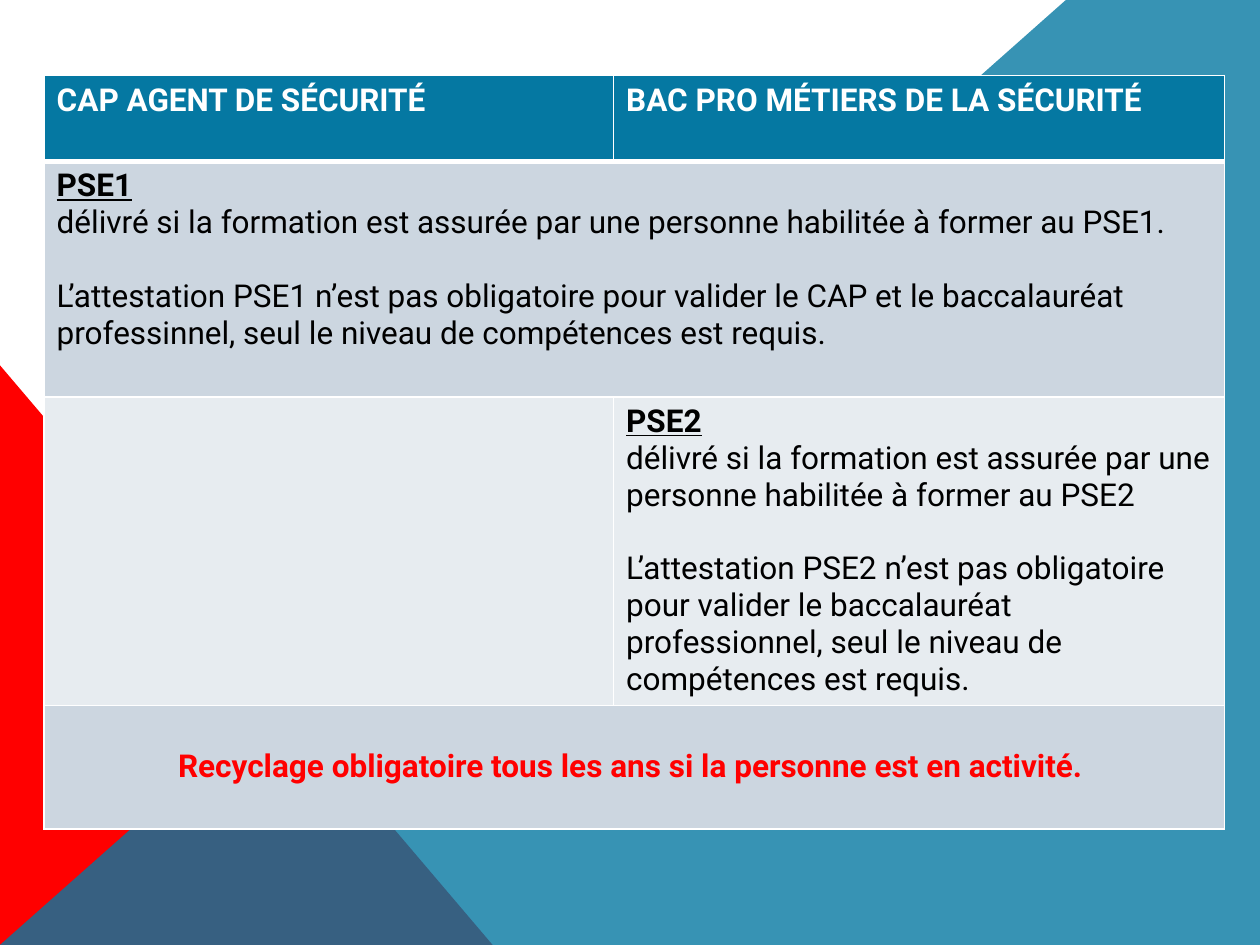
from lxml.etree import SubElement
from pptx import Presentation
from pptx.dml.color import RGBColor
from pptx.enum.shapes import MSO_SHAPE
from pptx.enum.text import MSO_ANCHOR, PP_ALIGN
from pptx.oxml import parse_xml
from pptx.oxml.ns import nsdecls, qn
from pptx.util import Inches, Pt

BLUE, RED, WHITE, BLACK = "0578A2", "FF0000", "FFFFFF", "000000"
DARK_BAND, LIGHT_BAND = "CCD6E0", "E7ECF0"


def color(value):
    return RGBColor.from_string(value)


class SlideBuilder:
    font_name = "Roboto"
    font_size = Pt(18)
    blank_line = Pt(21)

    def __init__(self, slide):
        self.slide = slide

    def paint(self, shape, fill, opacity=100):
        shape.shadow.inherit = False
        shape.fill.solid()
        shape.fill.fore_color.rgb = color(fill)
        shape.line.fill.background()
        if opacity < 100:
            color_element = shape._element.spPr.find(qn("a:solidFill"))[0]
            SubElement(color_element, qn("a:alpha"), val=str(opacity * 1000))

    def right_triangle(self, left, top, width, height, fill):
        shape = self.slide.shapes.add_shape(
            MSO_SHAPE.RIGHT_TRIANGLE,
            Inches(left), Inches(top), Inches(width), Inches(height))
        self.paint(shape, fill)

    def polygon(self, points, fill, opacity):
        start, *others = [(Inches(x), Inches(y)) for x, y in points]
        builder = self.slide.shapes.build_freeform(*start)
        builder.add_line_segments(others, close=True)
        self.paint(builder.convert_to_shape(), fill, opacity)

    def table(self, left, top, widths, heights):
        frame = self.slide.shapes.add_table(
            len(heights), len(widths), Inches(left), Inches(top),
            Inches(sum(widths)), Inches(sum(heights)))
        table = frame.table
        table.horz_banding = False
        for column, width in zip(table.columns, widths):
            column.width = Inches(width)
        for row, height in zip(table.rows, heights):
            row.height = Inches(height)
        return table

    def cell_style(self, cell, fill, bottom=1, top=1):
        cell.fill.solid()
        cell.fill.fore_color.rgb = color(fill)
        properties = cell._tc.get_or_add_tcPr()
        borders = {"lnL": 1, "lnR": 1, "lnT": top, "lnB": bottom}
        for index, (side, width) in enumerate(borders.items()):
            properties.insert(index, parse_xml(
                f'<a:{side} {nsdecls("a")} w="{Pt(width)}"><a:solidFill>'
                f'<a:srgbClr val="{WHITE}"/></a:solidFill></a:{side}>'))

    def run(self, paragraph, text, fill=BLACK, bold=False, underline=False):
        run = paragraph.add_run()
        run.text = text
        run.font.name = self.font_name
        run.font.size = self.font_size
        run.font.bold = bold
        run.font.underline = underline
        run.font.color.rgb = color(fill)

    def certificate(self, cell, name, condition, notice):
        heading = cell.text_frame.paragraphs[0]
        self.run(heading, name, bold=True, underline=True)
        self.run(cell.text_frame.add_paragraph(), condition)
        paragraph = cell.text_frame.add_paragraph()
        paragraph.space_before = self.blank_line
        self.run(paragraph, notice)


def main():
    presentation = Presentation()
    presentation.slide_width = Inches(10)
    presentation.slide_height = Inches(7.5)
    slide = presentation.slides.add_slide(presentation.slide_layouts[6])
    builder = SlideBuilder(slide)

    builder.right_triangle(0, 2.9, 3.91, 4.6, RED)
    builder.polygon([(0, 7.5), (8.46, 0), (10, 0), (10, 7.5)], BLUE, 80)

    table = builder.table(0.35, 0.6, [4.52, 4.85], [0.68, 1.87, 2.45, 0.98])
    row_fills = [BLUE, DARK_BAND, LIGHT_BAND, DARK_BAND]
    for row_index, fill in enumerate(row_fills):
        for cell in table.rows[row_index].cells:
            builder.cell_style(cell, fill, bottom=3 if row_index == 0 else 1,
                               top=3 if row_index == 1 else 1)
    for row_index in (1, 3):
        table.cell(row_index, 0).merge(table.cell(row_index, 1))

    headings = ["CAP AGENT DE SÉCURITÉ", "BAC PRO MÉTIERS DE LA SÉCURITÉ"]
    for cell, heading in zip(table.rows[0].cells, headings):
        builder.run(cell.text_frame.paragraphs[0], heading, WHITE, bold=True)

    builder.certificate(
        table.cell(1, 0), "PSE1",
        "délivré si la formation est assurée par une personne habilitée à former au PSE1.",
        "L’attestation PSE1 n’est pas obligatoire pour valider le CAP et le baccalauréat "
        "professinnel, seul le niveau de compétences est requis.")
    builder.certificate(
        table.cell(2, 1), "PSE2",
        "délivré si la formation est assurée par une personne habilitée à former au PSE2",
        "L’attestation PSE2 n’est pas obligatoire pour valider le baccalauréat "
        "professionnel, seul le niveau de compétences est requis.")

    reminder = table.cell(3, 0)
    reminder.vertical_anchor = MSO_ANCHOR.MIDDLE
    paragraph = reminder.text_frame.paragraphs[0]
    paragraph.alignment = PP_ALIGN.CENTER
    builder.run(paragraph,
                "Recyclage obligatoire tous les ans si la personne est en activité. ",
                RED, bold=True)

    presentation.save("out.pptx")


if __name__ == "__main__":
    main()
